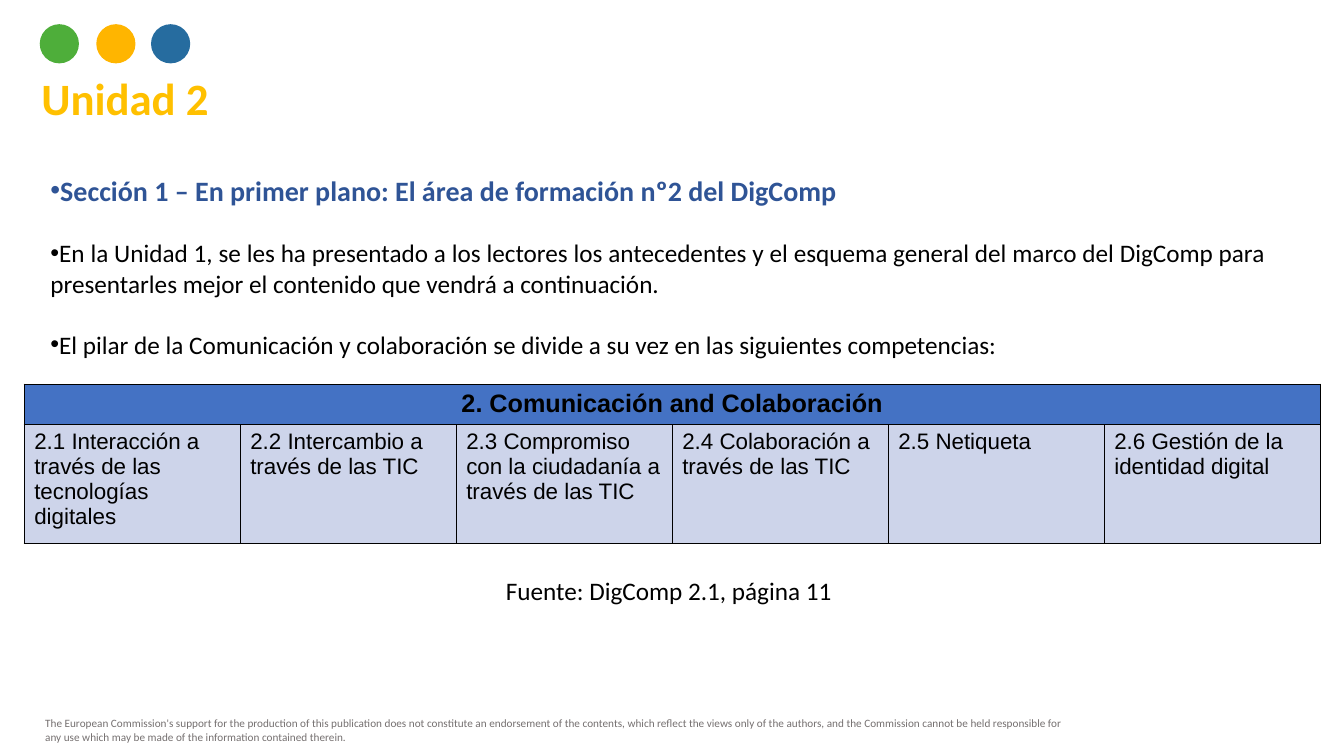
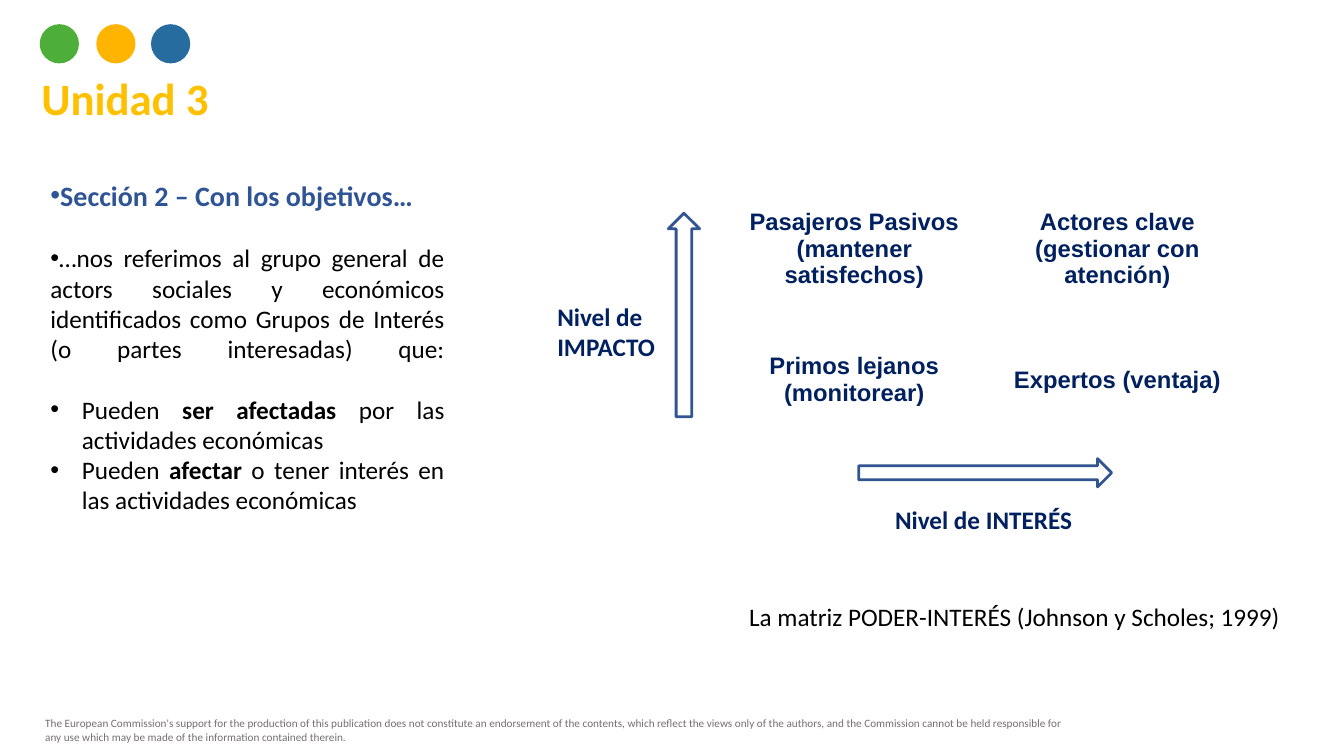
import pptx
import pptx.util
import pptx.dml.color
import pptx.enum.shapes
import pptx.enum.text
import pptx.oxml
import pptx.oxml.ns
from lxml import etree

Pt = pptx.util.Pt
RGBColor = pptx.dml.color.RGBColor
Align = pptx.enum.text.PP_ALIGN
Anchor = pptx.enum.text.MSO_ANCHOR
Shape = pptx.enum.shapes.MSO_SHAPE
qn = pptx.oxml.ns.qn

GREEN = RGBColor(0x4E, 0xAE, 0x3A)
AMBER = RGBColor(0xFF, 0xB5, 0x00)
BLUE = RGBColor(0x26, 0x6C, 0x9F)
GOLD = RGBColor(0xFF, 0xC0, 0x00)
HEADING_BLUE = RGBColor(0x2F, 0x54, 0x96)
ARROW_BLUE = RGBColor(0x32, 0x54, 0x91)
NAVY = RGBColor(0x00, 0x20, 0x60)
HEADER_BLUE = RGBColor(0x44, 0x72, 0xC4)
CELL_BLUE = RGBColor(0xCD, 0xD4, 0xEA)
GREY = RGBColor(0x75, 0x70, 0x70)
BLACK = RGBColor(0, 0, 0)
WHITE = RGBColor(0xFF, 0xFF, 0xFF)

DISCLAIMER = (
    "The European Commission's support for the production of this publication does not "
    "constitute an endorsement of the contents, which reflect the views only of the authors, "
    "and the Commission cannot be held responsible for any use which may be made of the "
    "information contained therein."
)


def style(para, size, color, bold=None, align=Align.LEFT, font="Calibri"):
    para.alignment = align
    para.font.name = font
    para.font.size = Pt(size)
    para.font.bold = bold
    para.font.color.rgb = color


def add_label(page, bounds, text, size, color, bold=False, align=Align.LEFT):
    box = page.shapes.add_textbox(*map(Pt, bounds))
    box.text_frame.word_wrap = True
    para = box.text_frame.paragraphs[0]
    para.text = text
    style(para, size, color, bold, align)


deck = pptx.Presentation()
deck.slide_width, deck.slide_height = Pt(960), Pt(540)

units = [
    (
        "Unidad 2",
        (28.8, 120.2, 882.7, 140.4),
        "Sección 1 – En primer plano: El área de formación nº2 del DigComp",
        [
            "En la Unidad 1, se les ha presentado a los lectores los antecedentes y el esquema "
            "general del marco del DigComp para presentarles mejor el contenido que vendrá a "
            "continuación.",
            "El pilar de la Comunicación y colaboración se divide a su vez en las siguientes "
            "competencias:",
        ],
        [],
    ),
    (
        "Unidad 3",
        (28.8, 123.8, 295.9, 271.4),
        "Sección 2 – Con los objetivos…",
        [
            "…nos referimos al grupo general de actors sociales y económicos identificados como "
            "Grupos de Interés (o partes interesadas) que:\v",
        ],
        [
            ("Pueden ", "ser afectadas", " por las actividades económicas"),
            ("Pueden ", "afectar", " o tener interés en las actividades económicas"),
        ],
    ),
]

pages = []
for unit, body_bounds, heading, texts, bullets in units:
    page = deck.slides.add_slide(deck.slide_layouts[1])
    pages.append(page)
    add_label(page, (25.2, 508.3, 753.1, 26.6), DISCLAIMER, 8, GREY)

    title, body = page.placeholders
    for box, bounds in ((title, (22.3, 46.8, 146.2, 46.1)), (body, body_bounds)):
        box.left, box.top, box.width, box.height = map(Pt, bounds)
        box.text_frame.auto_size = pptx.enum.text.MSO_AUTO_SIZE.NONE
        box.text_frame.vertical_anchor = Anchor.TOP
        box.text_frame.word_wrap = True
    title.text_frame.text = unit
    style(title.text_frame.paragraphs[0], 32, GOLD, True)

    frame = body.text_frame
    for index, content in enumerate([heading, *texts, *bullets]):
        para = frame.paragraphs[0] if index == 0 else frame.add_paragraph()
        is_bullet = content in bullets
        para.space_before = Pt(22 if index and not is_bullet else 0)
        properties = para._p.get_or_add_pPr()
        properties.set("marL", str(Pt(22.5 if is_bullet else 0)))
        properties.set("indent", str(Pt(-22.5 if is_bullet else 0)))
        if is_bullet:
            etree.SubElement(properties, qn("a:buFont")).set("typeface", "Arial")
            etree.SubElement(properties, qn("a:buChar")).set("char", "•")
            for position, text in enumerate(content):
                span = para.add_run()
                span.text = text
                span.font.bold = position == 1
        else:
            para.text = content
        if index == 0:
            style(para, 20, HEADING_BLUE, True, Align.JUSTIFY)
        else:
            style(para, 18, BLACK, None, Align.JUSTIFY)

    for left, color in ((28.4, GREEN), (68.8, AMBER), (107.9, BLUE)):
        dot = page.shapes.add_shape(Shape.OVAL, Pt(left), Pt(17.3), Pt(28), Pt(28))
        dot.shadow.inherit = False
        dot.fill.solid()
        dot.fill.fore_color.rgb = color
        dot.line.fill.background()

competence_page, matrix_page = pages

competences = [
    "2.1 Interacción a través de las tecnologías digitales",
    "2.2 Intercambio a través de las TIC",
    "2.3 Compromiso con la ciudadanía a través de las TIC",
    "2.4 Colaboración a través de las TIC",
    "2.5 Netiqueta",
    "2.6 Gestión de la identidad digital",
]
table = competence_page.shapes.add_table(
    2, len(competences), Pt(17.3), Pt(274.5), Pt(925.9), Pt(113.6)
).table
table.horz_banding = False
table.rows[0].height, table.rows[1].height = Pt(28.6), Pt(85)
table.cell(0, 0).merge(table.cell(0, len(competences) - 1))
for column, competence in enumerate(competences):
    for row, fill in enumerate((HEADER_BLUE, CELL_BLUE)):
        cell = table.cell(row, column)
        cell.fill.solid()
        cell.fill.fore_color.rgb = fill
        for order, side in enumerate("LRTB"):
            border = pptx.oxml.parse_xml(
                f'<a:ln{side} xmlns:a="http://schemas.openxmlformats.org/drawingml/2006/main" '
                f'w="{Pt(1)}"><a:solidFill><a:srgbClr val="{BLACK}"/></a:solidFill></a:ln{side}>'
            )
            cell._tc.get_or_add_tcPr().insert(order, border)
    para = table.cell(1, column).text_frame.paragraphs[0]
    para.text = competence
    style(para, 16, BLACK, False, font="Arial")
para = table.cell(0, 0).text_frame.paragraphs[0]
para.text = "2. Comunicación and Colaboración"
style(para, 18, BLACK, True, Align.CENTER, "Arial")

add_label(competence_page, (281.5, 407.5, 392.4, 28.8),
          "Fuente: DigComp 2.1, página 11", 18, BLACK, align=Align.CENTER)

add_label(matrix_page, (499.7, 426.2, 450, 28.8),
          "La matriz PODER-INTERÉS (Johnson y Scholes; 1999)", 18, BLACK, align=Align.CENTER)

quadrants = [
    ["Pasajeros Pasivos (mantener satisfechos)", "Actores clave (gestionar con atención)"],
    ["Primos lejanos (monitorear)", "Expertos (ventaja)"],
]
matrix = matrix_page.shapes.add_table(2, 2, Pt(515.5), Pt(131), Pt(375.9), Pt(187.2)).table
matrix.first_row = matrix.horz_banding = False
matrix.columns[0].width, matrix.columns[1].width = Pt(189.4), Pt(186.5)
for row, names in enumerate(quadrants):
    for column, name in enumerate(names):
        cell = matrix.cell(row, column)
        cell.fill.background()
        cell.vertical_anchor = Anchor.MIDDLE
        para = cell.text_frame.paragraphs[0]
        para.text = name
        style(para, 17, NAVY, True, Align.CENTER, "Arial")

for kind, bounds in (
    (Shape.RIGHT_ARROW, (613.4, 327.6, 180.7, 20.2)),
    (Shape.UP_ARROW, (477.4, 152.3, 22.3, 145.4)),
):
    arrow = matrix_page.shapes.add_shape(kind, *map(Pt, bounds))
    arrow.shadow.inherit = False
    arrow.fill.solid()
    arrow.fill.fore_color.rgb = WHITE
    arrow.line.color.rgb = ARROW_BLUE
    arrow.line.width = Pt(2)

add_label(matrix_page, (391, 211.7, 89.3, 51.1), "Nivel de IMPACTO", 18, NAVY, True)
add_label(matrix_page, (632.2, 356.4, 142.6, 28.8), "Nivel de INTERÉS", 18, NAVY, True)

deck.save("out.pptx")
